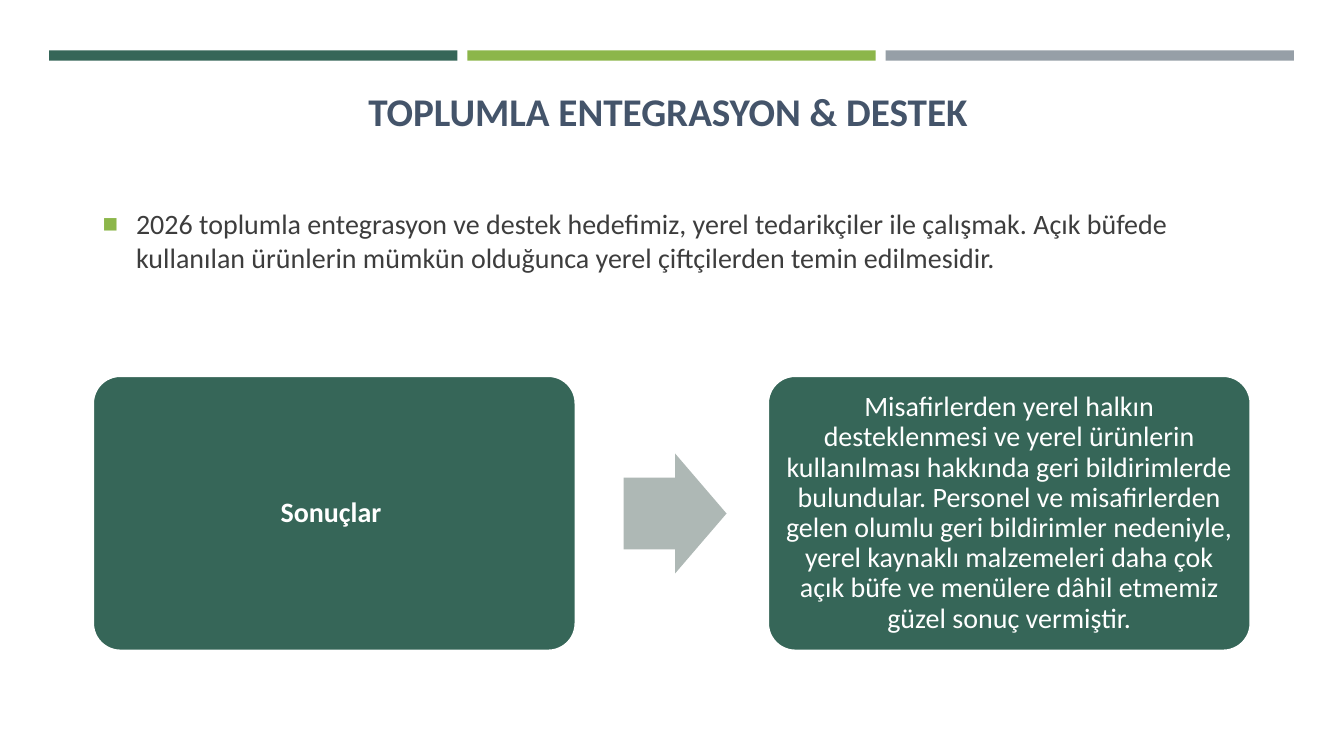
from lxml import etree
from pptx import Presentation, util as u
from pptx.dml.color import RGBColor
from pptx.enum import shapes, text
from pptx.oxml.ns import qn

GREEN = RGBColor(0x36, 0x66, 0x58)
LIME = RGBColor(0x8C, 0xB6, 0x4A)
GREY = RGBColor(0x96, 0x9F, 0xA7)
ARROW = RGBColor(0xAE, 0xB8, 0xB5)
NAVY = RGBColor(0x44, 0x54, 0x6A)
DARK = RGBColor(0x3D, 0x3D, 0x3D)
WHITE = RGBColor(0xFF, 0xFF, 0xFF)
SHAPE = shapes.MSO_SHAPE
CENTER = text.PP_ALIGN.CENTER


def write(tf, content, size=20, color=WHITE, bold=False, align=None, spacing=None):
    """Fill a text frame with one formatted paragraph."""
    tf.word_wrap = True
    p = tf.paragraphs[0]
    p.alignment = align
    p.line_spacing = spacing
    r = p.add_run()
    r.text = content
    r.font.name = "Calibri"
    r.font.size = u.Pt(size)
    r.font.bold = bold
    r.font.color.rgb = color
    return p


def add_bullet(p, char, color, percent, indent):
    pPr = p._p.get_or_add_pPr()
    pPr.set("marL", str(indent))
    pPr.set("indent", str(-indent))
    clr = etree.SubElement(pPr, qn("a:buClr"))
    etree.SubElement(clr, qn("a:srgbClr"), val=str(color))
    etree.SubElement(pPr, qn("a:buSzPct"), val=str(percent * 1000))
    etree.SubElement(pPr, qn("a:buFont"), typeface="Arial")
    etree.SubElement(pPr, qn("a:buChar"), char=char)


class Builder:
    """Draws styled elements on the current slide; lengths in cm."""

    def __init__(self, slide):
        self.s = slide

    def shape(self, kind, box, fill, line=None, adj=()):
        sp = self.s.shapes.add_shape(kind, *map(u.Cm, box))
        sp.shadow.inherit = False
        sp.fill.solid()
        sp.fill.fore_color.rgb = fill
        if line is None:
            sp.line.fill.background()
        else:
            sp.line.color.rgb = line
            sp.line.width = u.Pt(1.75)
        for i, value in enumerate(adj):
            sp.adjustments[i] = value
        return sp

    def textbox(self, box, content, **fmt):
        sp = self.s.shapes.add_textbox(*map(u.Cm, box))
        return write(sp.text_frame, content, **fmt)

    def card(self, box, content, **fmt):
        sp = self.shape(SHAPE.ROUNDED_RECTANGLE, box, GREEN, WHITE, (0.1,))
        tf = sp.text_frame
        tf.vertical_anchor = text.MSO_ANCHOR.MIDDLE
        tf.margin_left = tf.margin_right = u.Cm(0.2)
        tf.margin_top = tf.margin_bottom = u.Cm(0.2)
        return write(tf, content, align=CENTER, spacing=0.9, **fmt)


def main():
    prs = Presentation()
    prs.slide_width, prs.slide_height = u.Cm(33.87), u.Cm(19.05)
    b = Builder(prs.slides.add_slide(prs.slide_layouts[6]))

    # Top bars
    for i, color in enumerate((GREEN, LIME, GREY)):
        b.shape(SHAPE.RECTANGLE, (1.24 + i * 10.54, 1.27, 10.29, 0.26), color)

    # Title and goal
    b.textbox((2.34, 2.08, 29.21, 2.59), "TOPLUMLA ENTEGRASYON & DESTEK ",
              size=28, color=NAVY, bold=True, align=CENTER)
    goal = b.textbox(
        (2.34, 5.08, 29.21, 3.89),
        "2026 toplumla entegrasyon ve destek hedefimiz, yerel tedarikçiler ile "
        "çalışmak. Açık büfede kullanılan ürünlerin mümkün olduğunca yerel "
        "çiftçilerden temin edilmesidir.", color=DARK)
    add_bullet(goal, "■", LIME, 92, u.Cm(0.84))

    # Results flow
    b.card((2.34, 9.47, 12.17, 6.93), "Sonuçlar ", bold=True)
    b.shape(SHAPE.RIGHT_ARROW, (15.72, 11.43, 2.59, 3.02), ARROW, adj=(0.6, 0.5))
    b.card((19.35, 9.47, 12.17, 6.93),
           "Misafirlerden yerel halkın desteklenmesi ve yerel ürünlerin "
           "kullanılması hakkında geri bildirimlerde bulundular. Personel ve "
           "misafirlerden gelen olumlu geri bildirimler nedeniyle, yerel kaynaklı "
           "malzemeleri daha çok açık büfe ve menülere dâhil etmemiz güzel sonuç "
           "vermiştir.")

    prs.save("out.pptx")


if __name__ == "__main__":
    main()
